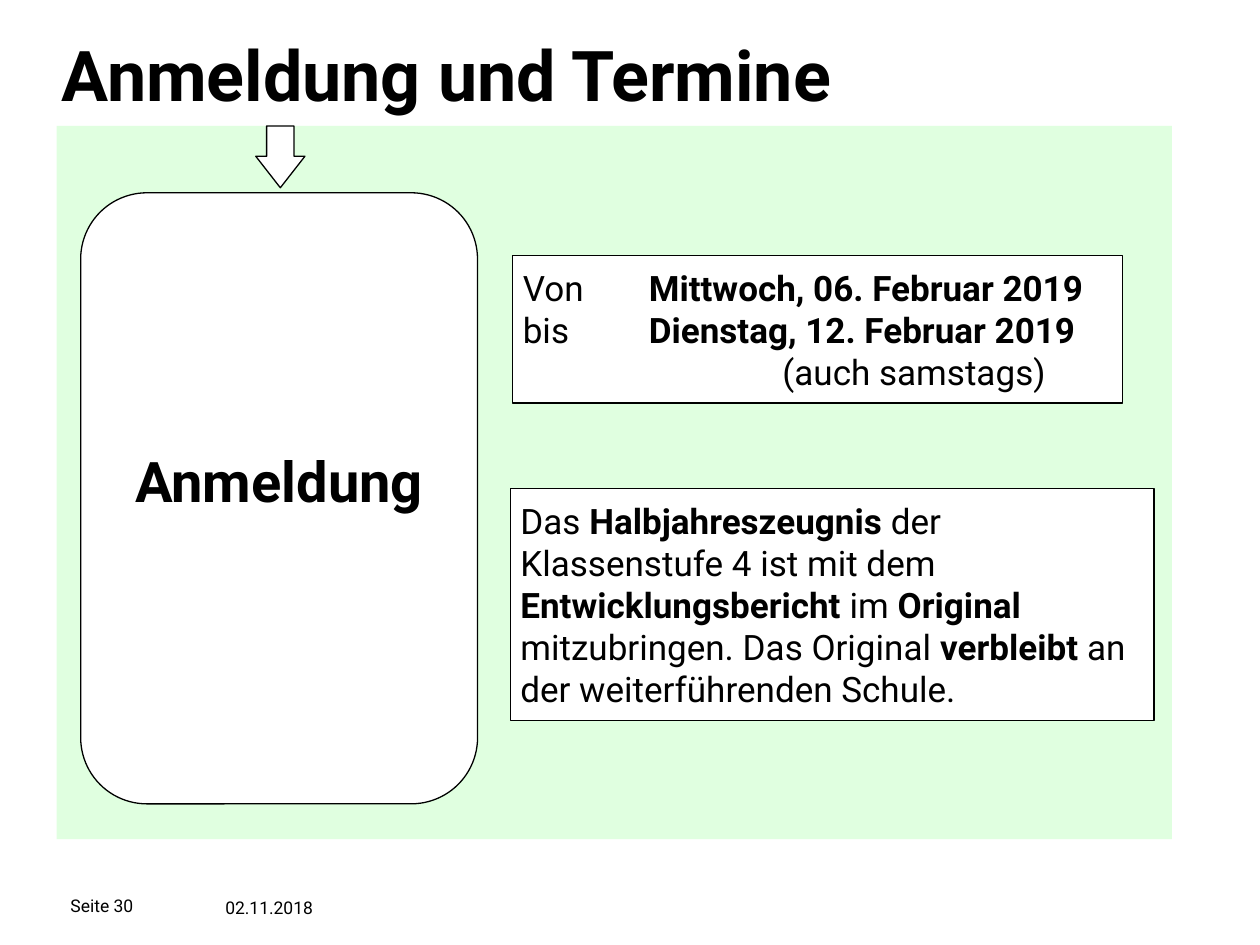
from lxml import etree
from pptx import Presentation
from pptx.dml.color import RGBColor
from pptx.enum.shapes import MSO_SHAPE
from pptx.enum.text import MSO_ANCHOR, MSO_AUTO_SIZE, PP_ALIGN
from pptx.oxml.ns import qn
from pptx.util import Inches, Pt

RECTANGLE = MSO_SHAPE.RECTANGLE
ROUNDED = MSO_SHAPE.ROUNDED_RECTANGLE
DOWN_ARROW = MSO_SHAPE.DOWN_ARROW
TOP, MIDDLE = MSO_ANCHOR.TOP, MSO_ANCHOR.MIDDLE
LEFT, CENTER = PP_ALIGN.LEFT, PP_ALIGN.CENTER
NO_AUTOSIZE = MSO_AUTO_SIZE.NONE

BLACK = RGBColor(0, 0, 0)
WHITE = RGBColor(255, 255, 255)
GREEN = RGBColor(0xCC, 0xFF, 0xCC)
FONT = "Roboto"
TITLE_ONLY = 5

DATES = [
    [("Von\t", False), ("Mittwoch, 06. Februar 2019", True)],
    [("bis\t", False), ("Dienstag, 12. Februar 2019", True)],
    [("(auch samstags)", False)],
]
CERTIFICATE = [[
    ("Das ", False), ("Halbjahreszeugnis", True),
    (" der Klassenstufe 4 ist mit dem ", False),
    ("Entwicklungsbericht", True), (" im ", False), ("Original", True),
    (" mitzubringen. Das Original ", False), ("verbleibt", True),
    (" an der weiterführenden Schule.", False),
]]


def write_text(box, paragraphs, *, size, align=LEFT, anchor=TOP,
               insets=(0.1, 0.05, 0.1, 0.05)):
    """Fill a box with paragraphs made of (text, bold) spans."""
    frame = box.text_frame
    frame.word_wrap = True
    frame.auto_size = NO_AUTOSIZE
    frame.vertical_anchor = anchor
    (frame.margin_left, frame.margin_top,
     frame.margin_right, frame.margin_bottom) = map(Inches, insets)
    for index, spans in enumerate(paragraphs):
        para = frame.paragraphs[0] if index == 0 else frame.add_paragraph()
        para.alignment = align
        for text, bold in spans:
            span = para.add_run()
            span.text = text
            span.font.name = FONT
            span.font.size = Pt(size)
            span.font.bold = bold
            span.font.color.rgb = BLACK


def add_panel(page, kind, place, *, fill=WHITE, line=BLACK, adjustments=()):
    """Add a flat preset shape, outlined unless line is None."""
    panel = page.shapes.add_shape(kind, *map(Inches, place))
    panel.shadow.inherit = False
    panel.fill.solid()
    panel.fill.fore_color.rgb = fill
    if line is None:
        panel.line.fill.background()
    else:
        panel.line.color.rgb = line
        panel.line.width = Pt(0.75)
    for index, value in enumerate(adjustments):
        panel.adjustments[index] = value
    return panel


def set_opacity(panel, percent):
    """Make the solid fill of a panel partly transparent."""
    color = panel.fill._xPr.find(qn("a:solidFill"))[0]
    etree.SubElement(color, qn("a:alpha"), val=str(percent * 1000))


def add_tab_stop(para, inches):
    """Give a paragraph one left tab stop."""
    tabs = etree.SubElement(para._p.get_or_add_pPr(), qn("a:tabLst"))
    etree.SubElement(tabs, qn("a:tab"), pos=str(Inches(inches)), algn="l")


def add_title(page):
    """Place the heading in the title placeholder."""
    title = page.shapes.title
    title.left, title.top = Inches(0.39), Inches(0.2)
    title.width, title.height = Inches(6.69), Inches(0.77)
    write_text(title, [[("Anmeldung und Termine", True)]], size=40)


def add_footer(page, text, left, **text_format):
    """Add a small footer text."""
    box = page.shapes.add_textbox(*map(Inches, (left, 7.07, 1.26, 0.24)))
    write_text(box, [[(text, False)]], size=10, **text_format)


def add_info_box(page, place, paragraphs):
    """Add an outlined box with running text."""
    box = add_panel(page, RECTANGLE, place)
    write_text(box, paragraphs, size=20, anchor=MIDDLE, insets=(0.08,) * 4)
    return box


def main():
    """Build the registration slide."""
    deck = Presentation()
    deck.slide_width, deck.slide_height = Inches(10), Inches(7.5)
    page = deck.slides.add_slide(deck.slide_layouts[TITLE_ONLY])

    add_footer(page, "Seite 30", 0.56, anchor=MIDDLE, insets=(0,) * 4)
    add_footer(page, "02.11.2018", 1.69)
    background = add_panel(page, RECTANGLE, (0.45, 1, 8.85, 5.66),
                           fill=GREEN, line=None)
    set_opacity(background, 60)
    add_title(page)

    step = add_panel(page, ROUNDED, (0.64, 1.53, 3.15, 4.85),
                     adjustments=(0.167,))
    write_text(step, [[("Anmeldung", True)]], size=32, align=CENTER,
               anchor=MIDDLE, insets=(0.04, 0.39, 0.04, 0.68))

    add_info_box(page, (4.05, 3.88, 5.11, 1.84), CERTIFICATE)
    dates = add_info_box(page, (4.07, 2.03, 4.84, 1.17), DATES)
    *date_lines, remark = dates.text_frame.paragraphs
    for para in date_lines:
        add_tab_stop(para, 1)
    remark._p.get_or_add_pPr().set("marL", str(Inches(2.06)))

    add_panel(page, DOWN_ARROW, (2.03, 1, 0.39, 0.49),
              adjustments=(0.557, 0.64))
    deck.save("out.pptx")


if __name__ == "__main__":
    main()
